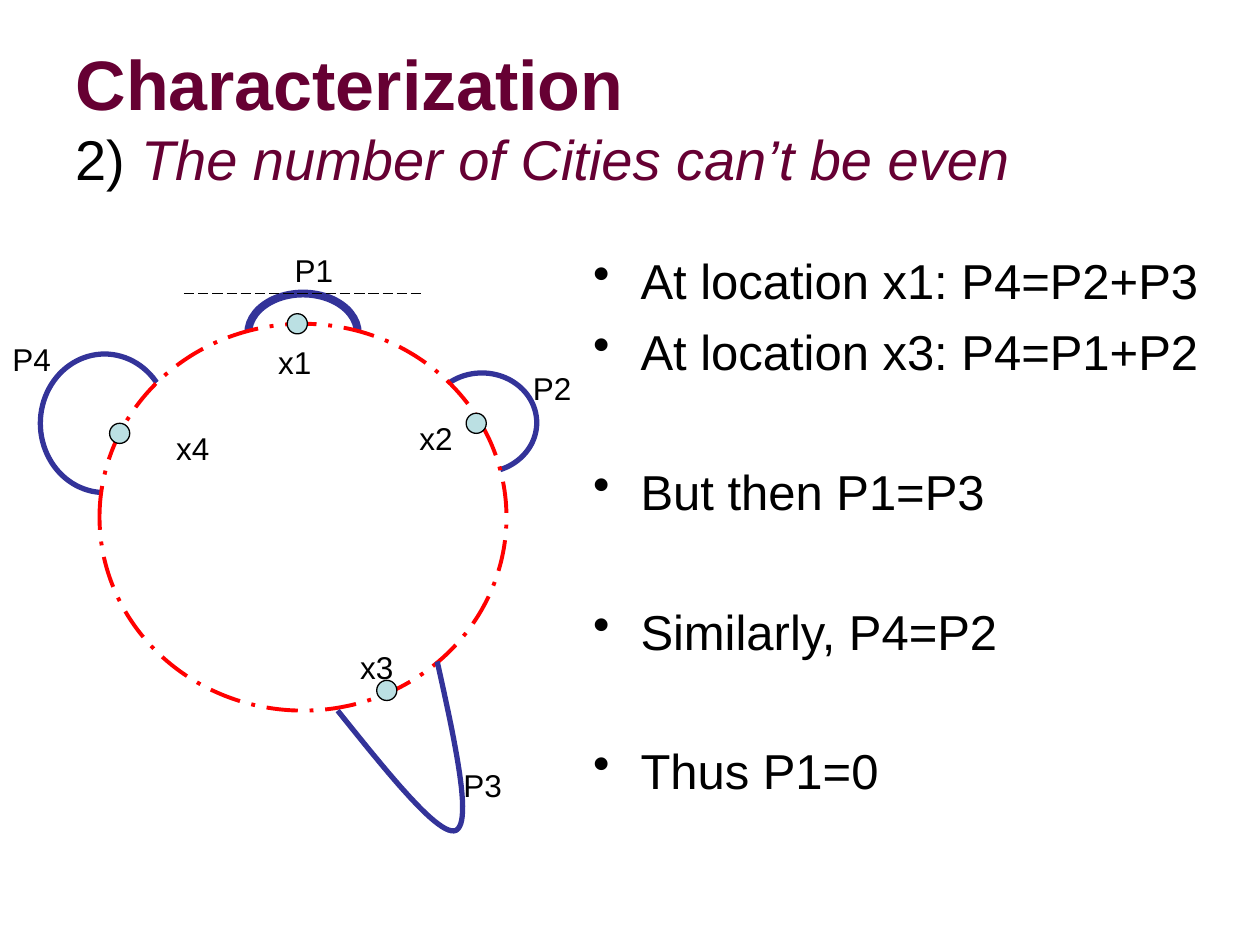
from dataclasses import dataclass

from lxml import etree
from pptx import Presentation
from pptx import util as u
from pptx.dml.color import RGBColor
from pptx.enum import dml, shapes, text
from pptx.oxml import ns


@dataclass(frozen=True)
class Theme:
    font: str = "Arial"
    ink: str = "000000"
    paper: str = "FFFFFF"
    accent: str = "660033"
    loop: str = "333399"
    tour: str = "FF0000"
    city: str = "BBE0E3"
    title: int = 40
    subtitle: int = 32
    body: int = 28
    label: int = 18


def rgb(value):
    return RGBColor.from_string(value)


class SlideBuilder:
    COLUMNS, ROWS = 100, 75

    def __init__(self, prs, theme):
        self.prs, self.theme = prs, theme
        self.s = prs.slides.add_slide(prs.slide_layouts[5])

    def x(self, columns):
        return round(self.prs.slide_width * columns / self.COLUMNS)

    def y(self, rows):
        return round(self.prs.slide_height * rows / self.ROWS)

    def box(self, left, top, width, height):
        return self.x(left), self.y(top), self.x(width), self.y(height)

    def stroke(self, line, color, width, dash=None):
        line.color.rgb = rgb(color)
        line.width = u.Pt(width)
        if dash:
            line.dash_style = dash

    def style(self, font, size, color):
        font.name, font.size = self.theme.font, u.Pt(size)
        font.color.rgb = rgb(color)

    def title(self, area, heading, number, claim):
        t, sp = self.theme, self.s.shapes.title
        sp.left, sp.top, sp.width, sp.height = self.box(*area)
        tf = sp.text_frame
        tf.auto_size = text.MSO_AUTO_SIZE.NONE
        tf.vertical_anchor = text.MSO_ANCHOR.MIDDLE
        p = tf.paragraphs[0]
        p.alignment = text.PP_ALIGN.LEFT
        for words, size, color, bold, italic in (
            (heading, t.title, t.accent, True, False),
            (number, t.subtitle, t.ink, False, False),
            (claim, t.subtitle, t.accent, False, True),
        ):
            r = p.add_run()
            r.text = words
            self.style(r.font, size, color)
            r.font.bold, r.font.italic = bold, italic
            if words == heading:
                p.add_line_break()

    def ellipse(self, area, color, width, fill=None, dash=None):
        sp = self.s.shapes.add_shape(shapes.MSO_SHAPE.OVAL, *self.box(*area))
        sp.shadow.inherit = False
        if fill:
            sp.fill.solid()
            sp.fill.fore_color.rgb = rgb(fill)
        else:
            sp.fill.background()
        self.stroke(sp.line, color, width, dash)

    def curve(self, start, segments, color, width, steps=24):
        points, here = [], start
        for a, b, end in segments:
            for i in range(1, steps + 1):
                k = i / steps
                weights = (1 - k) ** 3, 3 * k * (1 - k) ** 2, 3 * k * k * (1 - k), k ** 3
                cx, cy = (sum(w * v for w, v in zip(weights, axis))
                          for axis in zip(here, a, b, end))
                points.append((self.x(cx), self.y(cy)))
            here = end
        fb = self.s.shapes.build_freeform(self.x(start[0]), self.y(start[1]))
        fb.add_line_segments(points, close=False)
        sp = fb.convert_to_shape()
        sp.shadow.inherit = False
        sp.fill.background()
        self.stroke(sp.line, color, width)

    def line(self, start, end, color, width, dash):
        sp = self.s.shapes.add_connector(
            shapes.MSO_CONNECTOR.STRAIGHT,
            self.x(start[0]), self.y(start[1]), self.x(end[0]), self.y(end[1]))
        self.stroke(sp.line, color, width, dash)
        etree.SubElement(sp._element.spPr, ns.qn("a:effectLst"))

    def label(self, words, left, top, width):
        tf = self.s.shapes.add_textbox(*self.box(left, top, width, 4)).text_frame
        tf.word_wrap = False
        p = tf.paragraphs[0]
        p.text = words
        self.style(p.font, self.theme.label, self.theme.ink)

    def bullets(self, area, items, indent=3.75, space=7):
        tf = self.s.shapes.add_textbox(*self.box(*area)).text_frame
        tf.word_wrap = True
        for i, (words, gap) in enumerate(items):
            p = tf.paragraphs[0] if i == 0 else tf.add_paragraph()
            p.text = words
            p.space_before = u.Pt(space + gap)
            self.style(p.font, self.theme.body, self.theme.ink)
            pPr = p._p.get_or_add_pPr()
            pPr.set("marL", str(self.x(indent)))
            pPr.set("indent", str(-self.x(indent)))
            bullet = etree.Element(ns.qn("a:buChar"), char="•")
            pPr.insert_element_before(bullet, "a:tabLst", "a:defRPr", "a:extLst")


def main():
    prs = Presentation()
    prs.slide_width, prs.slide_height = u.Inches(10), u.Inches(7.5)
    t = Theme()
    b = SlideBuilder(prs, t)

    b.title((5, 3, 90, 12.5), "Characterization", "2) ", "The number of Cities can’t be even")

    for area, width in (
        ((19.7, 23.3, 8.7, 6.3), 4.5),
        ((33.9, 29.6, 8.7, 7.9), 3),
        ((3.2, 28.1, 10.2, 11), 3),
    ):
        b.ellipse(area, t.loop, width)
    b.ellipse((7.9, 25.7, 32.3, 30.7), t.tour, 2.25, t.paper, dml.MSO_LINE.LONG_DASH_DOT)
    b.curve((26.8, 56.4), (
        ((30.9, 61.5), (34.9, 66.5), (36.2, 65.9)),
        ((37.5, 65.2), (36.1, 58.8), (34.7, 52.5)),
    ), t.loop, 3)

    for words, left, top in (("x1", 21.1, 26.7), ("x2", 32.3, 32.8),
                             ("x3", 27.6, 50.9), ("x4", 13, 33.6)):
        b.label(words, left, top, 4.7)
    for left, top in ((8.7, 33.6), (22.8, 24.9), (37, 32.8), (29.9, 54)):
        b.ellipse((left, top, 1.6, 1.6), t.ink, 0.75, t.city)
    b.line((14.6, 23.3), (33.5, 23.3), t.ink, 0.75, dml.MSO_LINE.LONG_DASH)
    for words, left, top in (("P1", 22.4, 19.4), ("P2", 41.3, 28.8),
                             ("P3", 35.8, 60.3), ("P4", 0, 26.5)):
        b.label(words, left, top, 5.1)

    blank_line = 39.2
    b.bullets((46.1, 19.4, 53.9, 47.6), (
        ("At location x1: P4=P2+P3", 0),
        ("At location x3: P4=P1+P2", 0),
        ("But then P1=P3", blank_line),
        ("Similarly, P4=P2", blank_line),
        ("Thus P1=0", blank_line),
    ))

    prs.save("out.pptx")


if __name__ == "__main__":
    main()
